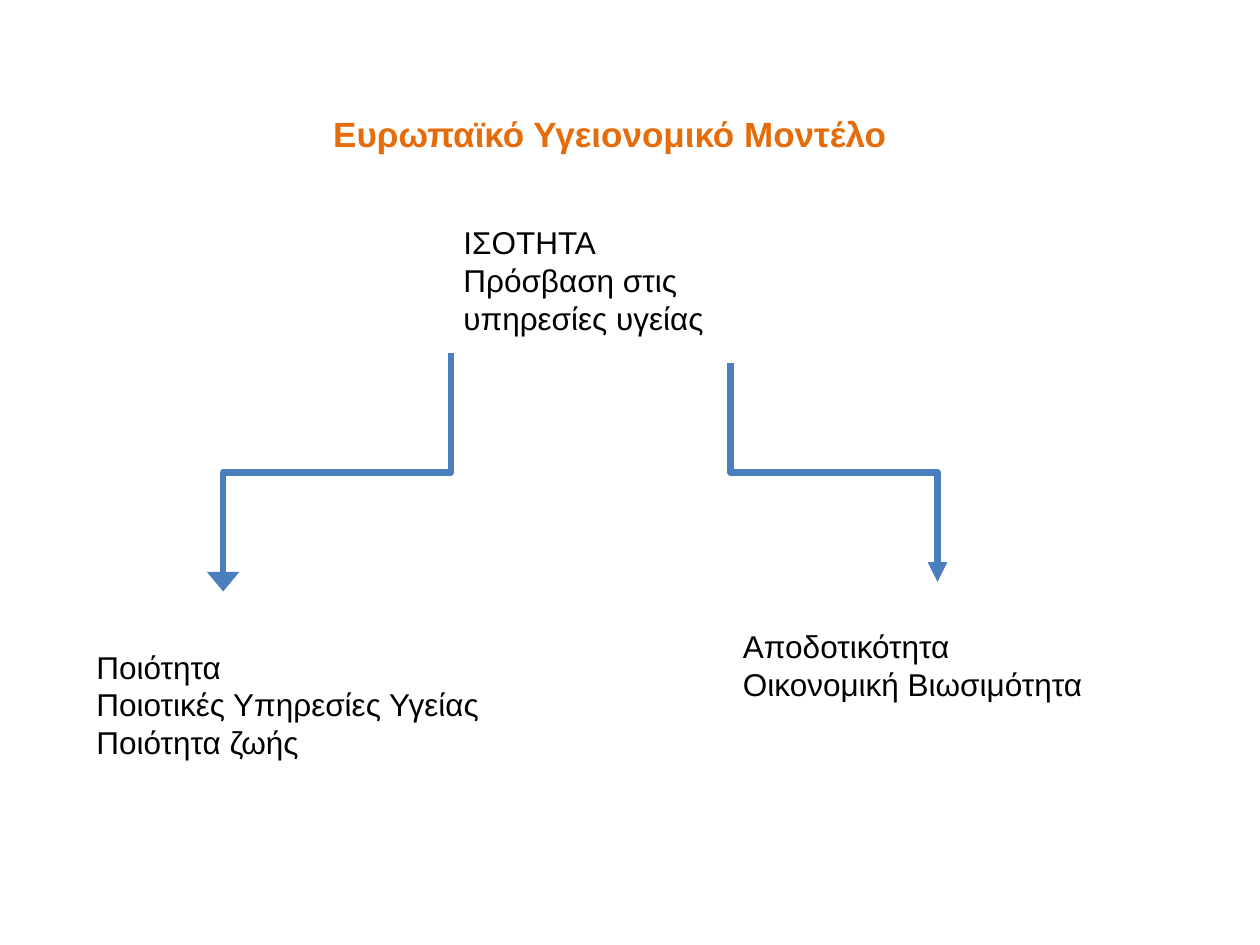
from dataclasses import dataclass

from lxml.etree import SubElement
from pptx import Presentation
from pptx.dml.color import RGBColor
from pptx.enum.shapes import MSO_CONNECTOR as Connector
from pptx.enum.text import MSO_ANCHOR as Anchor, MSO_AUTO_SIZE as AutoSize, PP_ALIGN as Align
from pptx.oxml.ns import qn
from pptx.util import Pt


@dataclass(frozen=True)
class Theme:
    font: str = "Arial"
    title_size: float = 20
    text_size: float = 18
    line_width: float = 3.75
    title_color: RGBColor = RGBColor(0xE4, 0x6C, 0x0A)
    text_color: RGBColor = RGBColor(0, 0, 0)
    arrow_color: RGBColor = RGBColor(0x4B, 0x7E, 0xBC)


THEME = Theme()


def style_font(font, size, color, bold=False):
    font.name = THEME.font
    font.size = Pt(size)
    font.bold = bold
    font.color.rgb = color


def set_title(page, text, left, top, width, height):
    title = page.shapes.title
    title.left, title.top, title.width, title.height = map(Pt, (left, top, width, height))
    frame = title.text_frame
    frame.text = text
    frame.vertical_anchor = Anchor.TOP
    frame.auto_size = AutoSize.NONE
    para = frame.paragraphs[0]
    para.alignment = Align.CENTER
    style_font(para.font, THEME.title_size, THEME.title_color, bold=True)


def add_text(page, lines, left, top, width, height):
    box = page.shapes.add_textbox(*map(Pt, (left, top, width, height)))
    frame = box.text_frame
    frame.word_wrap = True
    frame.auto_size = AutoSize.SHAPE_TO_FIT_TEXT
    frame.text = "\n".join(lines)
    for para in frame.paragraphs:
        style_font(para.font, THEME.text_size, THEME.text_color)


def add_branch(page, start, end, head_width="med"):
    """Add an elbow arrow that leaves downwards, turns halfway and ends downwards."""
    (x1, y1), (x2, y2) = start, end
    center_x, center_y = (x1 + x2) / 2, (y1 + y2) / 2
    # The elbow runs sideways before its quarter turn, so its sides are swapped.
    half_width, half_height = (y2 - y1) / 2, abs(x2 - x1) / 2
    goes_right = x2 > x1
    side = -1 if goes_right else 1
    branch = page.shapes.add_connector(
        Connector.ELBOW,
        Pt(center_x - side * half_width), Pt(center_y - half_height),
        Pt(center_x + side * half_width), Pt(center_y + half_height),
    )
    branch.line.color.rgb = THEME.arrow_color
    branch.line.width = Pt(THEME.line_width)
    properties = branch._element.spPr
    quarter_turns = 3 if goes_right else 1
    properties.find(qn("a:xfrm")).set("rot", str(quarter_turns * 90 * 60000))
    outline = properties.find(qn("a:ln"))
    SubElement(outline, qn("a:round"))
    SubElement(outline, qn("a:tailEnd"), type="triangle", w=head_width, len="med")
    SubElement(properties, qn("a:effectLst"))


def main():
    deck = Presentation()
    deck.slide_width, deck.slide_height = Pt(720), Pt(540)
    page = deck.slides.add_slide(deck.slide_layouts.get_by_name("Title Only"))

    set_title(page, "Ευρωπαϊκό Υγειονομικό Μοντέλο", 48, 60.5, 601, 55.5)
    add_text(page, ["ΙΣΟΤΗΤΑ", "Πρόσβαση στις υπηρεσίες υγείας"], 257.75, 124, 158.5, 72.7)
    add_text(page, ["Ποιότητα", "Ποιοτικές Υπηρεσίες Υγείας", "Ποιότητα ζωής"],
             48, 366.5, 255, 72.7)
    add_text(page, ["Αποδοτικότητα", "Οικονομική Βιωσιμότητα"], 417.5, 355, 255, 51)

    add_branch(page, (417.5, 207.5), (535.75, 332.5))
    add_branch(page, (257.75, 202), (127.5, 338), head_width="lg")

    deck.save("out.pptx")


if __name__ == "__main__":
    main()
